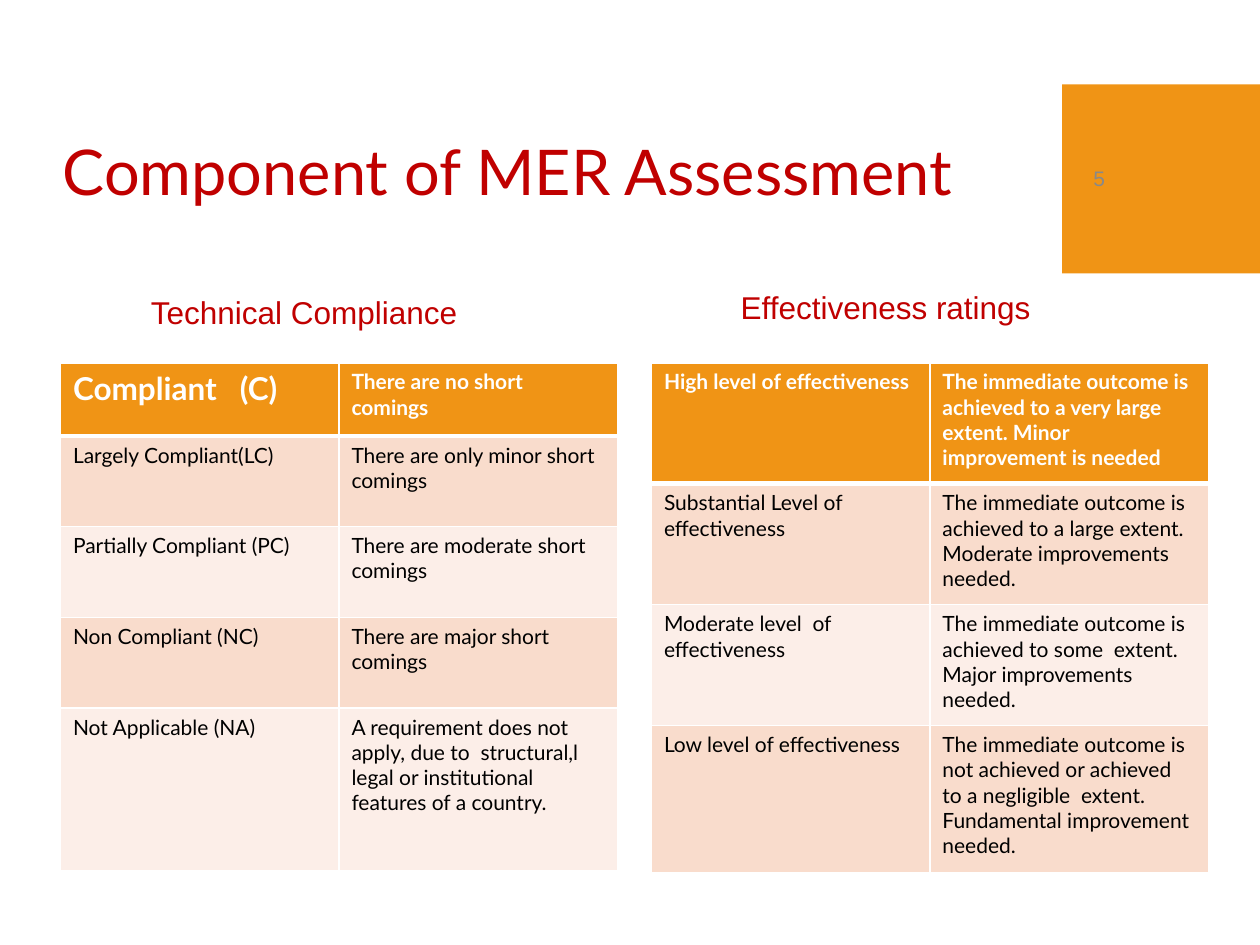
from lxml.etree import SubElement
from pptx import Presentation
from pptx.dml.color import RGBColor
from pptx.enum.shapes import MSO_SHAPE
from pptx.enum.text import MSO_ANCHOR
from pptx.oxml.ns import qn
from pptx.util import Inches, Pt

COLORS = {
    "orange": "F09415",
    "red": "C00000",
    "gray": "898989",
    "white": "FFFFFF",
    "black": "000000",
    "peach": "F9DCCC",
    "cream": "FCEEE8",
}


def write(frame, text, font="Lato", size=12, color="black", bold=False,
          anchor=MSO_ANCHOR.TOP, spacing=1.0):
    frame.word_wrap = True
    frame.vertical_anchor = anchor
    para = frame.paragraphs[0]
    para.line_spacing = spacing
    span = para.add_run()
    span.text = text
    span.font.name = font
    span.font.size = Pt(size)
    span.font.bold = bold
    span.font.color.rgb = RGBColor.from_string(COLORS[color])


def border(cell, side, points):
    line = SubElement(cell._tc.get_or_add_tcPr(), qn(f"a:ln{side}"), w=str(Pt(points)))
    fill = SubElement(line, qn("a:solidFill"))
    SubElement(fill, qn("a:srgbClr"), val=COLORS["white"])


deck = Presentation()
deck.slide_width = Inches(10)
deck.slide_height = Inches(7.5)
page = deck.slides.add_slide(deck.slide_layouts[6])

corner = page.shapes.add_shape(
    MSO_SHAPE.RECTANGLE, Inches(8.43), Inches(0.67), Inches(1.57), Inches(1.5))
corner.shadow.inherit = False
corner.fill.solid()
corner.fill.fore_color.rgb = RGBColor.from_string(COLORS["orange"])
corner.line.fill.background()

texts = [
    ("5", (8.58, 0.82, 1.27, 1.19),
     dict(font="Arial", color="gray", anchor=MSO_ANCHOR.MIDDLE)),
    ("Component of MER Assessment", (0.4, 1.03, 9, 0.72),
     dict(size=36, color="red", anchor=MSO_ANCHOR.MIDDLE, spacing=0.9)),
    ("Technical Compliance", (1.1, 2.28, 2.74, 0.4),
     dict(font="Arial", size=18, color="red")),
    ("Effectiveness ratings", (5.78, 2.24, 3.12, 0.4),
     dict(font="Arial", size=18, color="red")),
]
for text, place, style in texts:
    box = page.shapes.add_textbox(*map(Inches, place))
    write(box.text_frame, text, **style)

compliance = [
    (0.58, "Compliant   (C)", "There are no short comings"),
    (0.72, "Largely Compliant(LC)", "There are only minor short comings"),
    (0.72, "Partially Compliant (PC)", "There are moderate short comings"),
    (0.72, "Non Compliant (NC)", "There are major short comings"),
    (1.29, "Not Applicable (NA)",
     "A requirement does not apply, due to  structural,l legal or institutional  "
     "features of a country."),
]
effectiveness = [
    (0.96, "High level of effectiveness",
     "The immediate outcome is achieved to a very large extent. "
     "Minor improvement is needed"),
    (0.96, "Substantial Level of effectiveness",
     "The immediate outcome is achieved to a large extent. "
     "Moderate improvements needed."),
    (0.96, "Moderate level  of effectiveness",
     "The immediate outcome is achieved to some  extent. "
     "Major improvements needed."),
    (1.17, "Low level of effectiveness",
     "The immediate outcome is not achieved or achieved  to a negligible  extent. "
     "Fundamental improvement needed."),
]

column_width = 2.21
for left, first_size, ratings in [(0.48, 18, compliance), (5.17, 12, effectiveness)]:
    height = sum(rating[0] for rating in ratings)
    table = page.shapes.add_table(
        len(ratings), 2, Inches(left), Inches(2.88),
        Inches(2 * column_width), Inches(height)).table
    for column in table.columns:
        column.width = Inches(column_width)
    for row, (row_height, *labels) in enumerate(ratings):
        table.rows[row].height = Inches(row_height)
        header = row == 0
        shade = "orange" if header else ("cream", "peach")[row % 2]
        for col, label in enumerate(labels):
            cell = table.cell(row, col)
            for side, points in [("L", 1), ("R", 1), ("T", 3 if row == 1 else 1),
                                 ("B", 3 if header else 1)]:
                border(cell, side, points)
            cell.fill.solid()
            cell.fill.fore_color.rgb = RGBColor.from_string(COLORS[shade])
            write(cell.text_frame, label, bold=header,
                  size=first_size if header and col == 0 else 12,
                  color="white" if header else "black")

deck.save("out.pptx")
